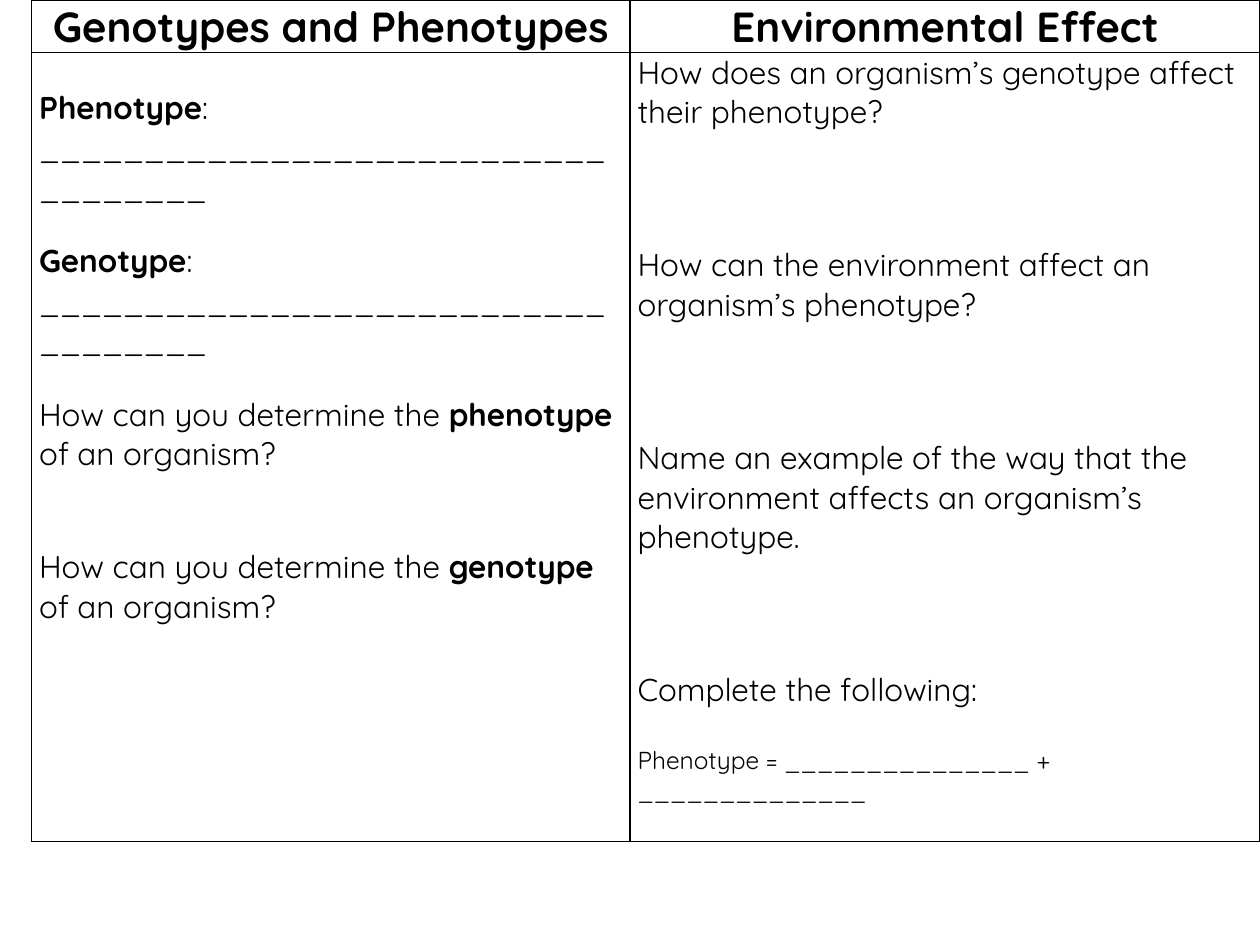
from lxml import etree
from pptx import Presentation
from pptx.dml.color import RGBColor
from pptx.enum import text
from pptx.oxml import ns
from pptx.util import Inches, Pt

FONT = "Quicksand"
INK = "000000"


def color(value):
    return RGBColor.from_string(value)


def add_borders(cell):
    properties = cell._tc.get_or_add_tcPr()
    for position, side in enumerate(("lnL", "lnR", "lnT", "lnB")):
        line = etree.Element(ns.qn(f"a:{side}"), w=str(Pt(1)))
        fill = etree.SubElement(line, ns.qn("a:solidFill"))
        etree.SubElement(fill, ns.qn("a:srgbClr"), val=INK)
        properties.insert(position, line)


headings = ["Genotypes and Phenotypes", "Environmental Effect"]
blank_line = "_" * 35
definitions_and_questions = [
    (0, 18, f"*Phenotype*: {blank_line}"),
    (20, 18, f"*Genotype*: {blank_line}"),
    (20, 18, "How can you determine the *phenotype* of an organism?"),
    (42, 18, "How can you determine the *genotype* of an organism?"),
]
environment_questions = [
    (0, 18, "How does an organism’s genotype affect their phenotype?"),
    (65, 18, "How can the environment affect an organism’s phenotype?"),
    (65, 18, "Name an example of the way that the environment affects an organism’s phenotype."),
    (65, 18, "Complete the following:"),
    (20, 14, f"Phenotype = {'_' * 15} + {'_' * 14}"),
]
rows = [
    [[(0, 24, f"*{heading}*")] for heading in headings],
    [definitions_and_questions, environment_questions],
]

prs = Presentation()
prs.slide_width, prs.slide_height = Inches(10), Inches(7.5)
slide = prs.slides.add_slide(prs.slide_layouts[6])
worksheet = slide.shapes.add_table(
    2, 2, Inches(0.25), Inches(0), Inches(9.75), Inches(6.67)).table
worksheet.first_row = worksheet.horz_banding = False
for column, width in zip(worksheet.columns, (4.75, 5)):
    column.width = Inches(width)
for row, height in zip(worksheet.rows, (0.41, 6.26)):
    row.height = Inches(height)

for row_index, row in enumerate(rows):
    for column_index, prompts in enumerate(row):
        cell = worksheet.cell(row_index, column_index)
        cell.fill.background()
        add_borders(cell)
        cell.margin_left = cell.margin_right = Inches(0.06)
        cell.margin_top = cell.margin_bottom = Inches(0)
        for index, (gap, size, wording) in enumerate(prompts):
            frame = cell.text_frame
            paragraph = frame.add_paragraph() if index else frame.paragraphs[0]
            paragraph.space_before = Pt(gap)
            if row_index == 0:
                paragraph.alignment = text.PP_ALIGN.CENTER
            for part_index, part in enumerate(wording.split("*")):
                if part:
                    run = paragraph.add_run()
                    run.text = part
                    run.font.name = FONT
                    run.font.size = Pt(size)
                    run.font.bold = part_index % 2 == 1
                    run.font.color.rgb = color(INK)

worksheet.cell(1, 0).margin_top = Inches(0.28)

prs.save("out.pptx")
